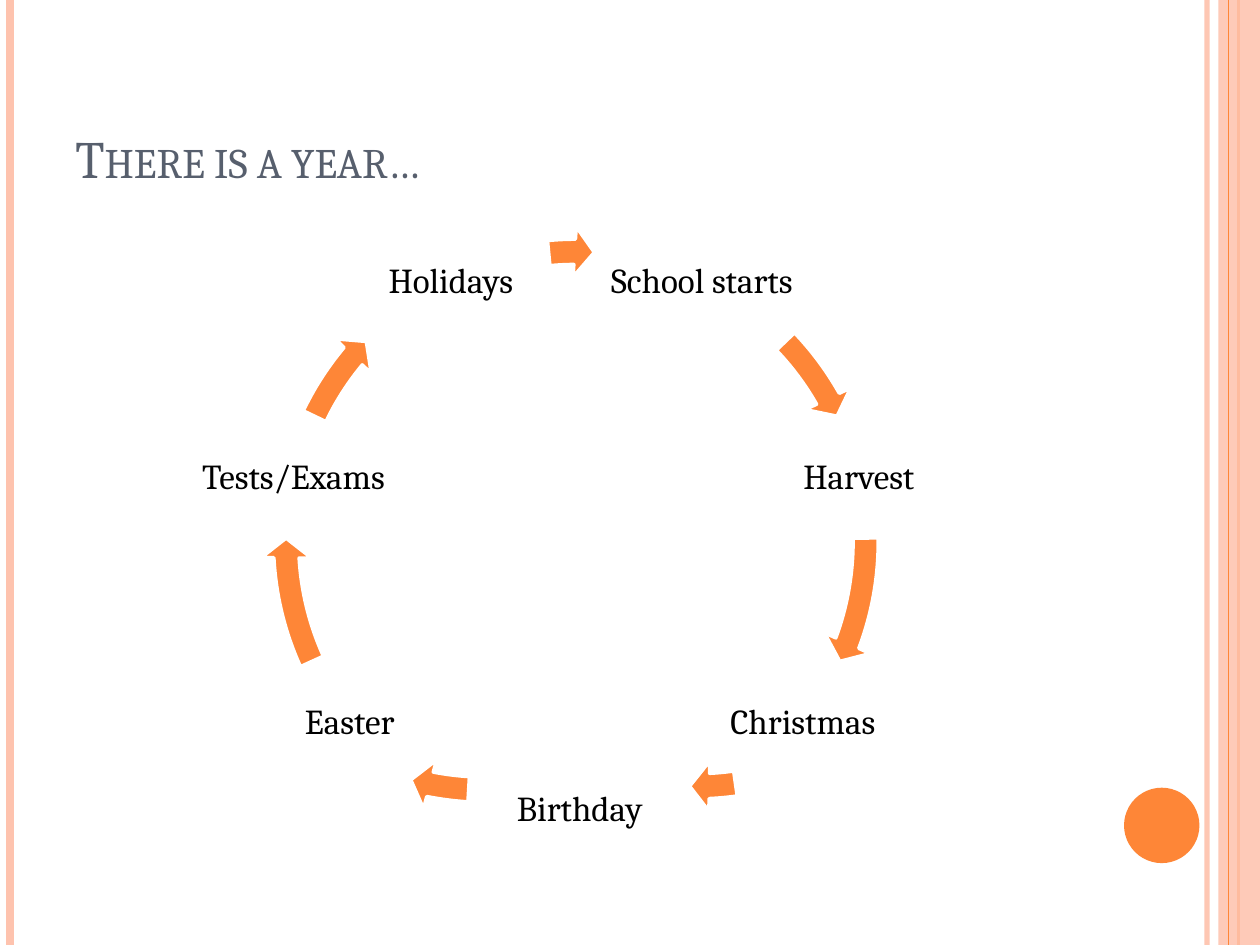
from lxml import etree
from pptx import Presentation
from pptx.dml.color import RGBColor
from pptx.enum.shapes import MSO_CONNECTOR, MSO_SHAPE
from pptx.enum.text import MSO_ANCHOR, PP_ALIGN
from pptx.oxml.ns import qn
from pptx.util import Cm, Pt

STRAIGHT = MSO_CONNECTOR.STRAIGHT
RECTANGLE, OVAL, CIRCULAR_ARROW = MSO_SHAPE.RECTANGLE, MSO_SHAPE.OVAL, MSO_SHAPE.CIRCULAR_ARROW
MIDDLE, BOTTOM = MSO_ANCHOR.MIDDLE, MSO_ANCHOR.BOTTOM
LEFT, CENTER = PP_ALIGN.LEFT, PP_ALIGN.CENTER

ORANGE = RGBColor(0xFE, 0x86, 0x37)
PEACH = RGBColor(0xFE, 0xC3, 0xAE)
SLATE = RGBColor(0x57, 0x5F, 0x6D)
BLACK = RGBColor(0, 0, 0)
WHITE = RGBColor(0xFF, 0xFF, 0xFF)

deck = Presentation()
deck.slide_width, deck.slide_height = Cm(25.4), Cm(19.05)
slide = deck.slides.add_slide(deck.slide_layouts[6])
shapes = slide.shapes


def add_text(text, left, top, width, height, size=20, color=BLACK, align=CENTER,
             anchor=MIDDLE, inset=0.08, spacing=0.9, small_caps=False):
    box = shapes.add_textbox(Cm(left), Cm(top), Cm(width), Cm(height))
    frame = box.text_frame
    frame.word_wrap = True
    frame.vertical_anchor = anchor
    frame.margin_left = frame.margin_right = Cm(inset)
    frame.margin_top = frame.margin_bottom = Cm(inset / 2 if small_caps else inset)
    paragraph = frame.paragraphs[0]
    paragraph.alignment = align
    paragraph.line_spacing = spacing
    run = paragraph.add_run()
    run.text = text
    run.font.name = "Cambria"
    run.font.size = Pt(size)
    run.font.color.rgb = color
    if small_caps:
        run._r.get_or_add_rPr().set("cap", "small")


def set_opacity(properties, percent):
    color = next(properties.iter(qn("a:srgbClr")))
    etree.SubElement(color, qn("a:alpha")).set("val", str(percent * 1000))


for x, color, weight, opacity in [
    (24.33, PEACH, 3, 93),
    (0.2, PEACH, 4.5, 100),
    (24.97, ORANGE, 1.5, 100),
]:
    stripe = shapes.add_connector(STRAIGHT, Cm(x), Cm(0), Cm(x), Cm(19.05))
    stripe.line.color.rgb = color
    stripe.line.width = Pt(weight)
    etree.SubElement(stripe._element.spPr, qn("a:effectLst"))
    if opacity < 100:
        set_opacity(stripe._element.spPr, opacity)

band = shapes.add_shape(RECTANGLE, Cm(24.56), Cm(0), Cm(0.84), Cm(19.05))
band.shadow.inherit = False
band.fill.solid()
band.fill.fore_color.rgb = PEACH
band.line.fill.background()
set_opacity(band._element.spPr, 87)

thin_stripe = shapes.add_connector(STRAIGHT, Cm(24.76), Cm(0), Cm(24.76), Cm(19.05))
thin_stripe.line.color.rgb = ORANGE
thin_stripe.line.width = Pt(0.75)
etree.SubElement(thin_stripe._element.spPr, qn("a:effectLst"))

dot = shapes.add_shape(OVAL, Cm(22.66), Cm(15.88), Cm(1.52), Cm(1.52))
dot.shadow.inherit = False
dot.fill.solid()
dot.fill.fore_color.rgb = ORANGE
dot.line.fill.background()

add_text("There is a year…", 1.27, 0.76, 20.75, 3.18, size=30, color=SLATE, align=LEFT,
         anchor=BOTTOM, inset=0.25, spacing=1, small_caps=True)

RING = (5.26, 4.57)
events = [
    ("School starts", 11.99, 4.45, 4.32, RING, 330.45, 316.31),
    ("Harvest", 14.94, 8.41, 4.75, RING, 20.5, 359.29),
    ("Christmas", 13.11, 13.34, 6.15, (7.67, 3.66), 87.24, 82.06),
    ("Birthday", 9.45, 15.11, 4.47, (3.45, 3.73), 101.15, 93.44),
    ("Easter", 5.82, 13.34, 2.46, RING, 176.79, 155.59),
    ("Tests/Exams", 3.61, 8.41, 4.62, RING, 219.78, 205.64),
    ("Holidays", 7.11, 4.45, 3.96, RING, 269.76, 264.62),
]
DEGREE = 0.6
for event, left, top, width, (ring_left, ring_top), head_angle, tail_angle in events:
    add_text(event, left, top, width, 2.46)
    arrow = shapes.add_shape(CIRCULAR_ARROW, Cm(ring_left), Cm(ring_top), Cm(12.7), Cm(12.7))
    arrow.shadow.inherit = False
    arrow.fill.solid()
    arrow.fill.fore_color.rgb = ORANGE
    arrow.line.color.rgb = WHITE
    arrow.line.width = Pt(2)
    settings = (0.04, 3.91 * DEGREE, head_angle * DEGREE, tail_angle * DEGREE, 0.04)
    for index, value in enumerate(settings):
        arrow.adjustments[index] = value

deck.save("out.pptx")
